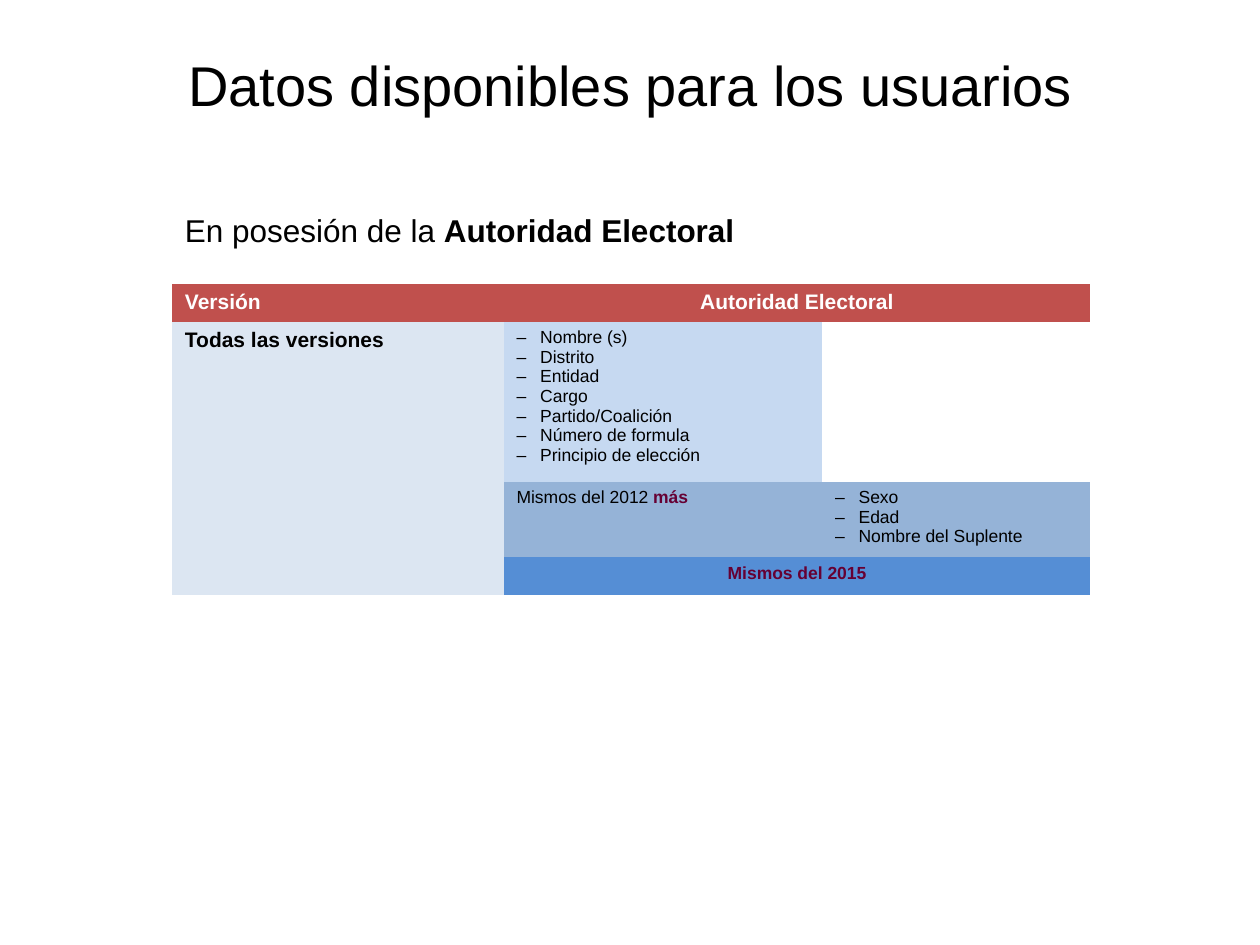
from lxml import etree
from pptx import Presentation
from pptx.dml.color import RGBColor
from pptx.enum.text import MSO_ANCHOR, PP_ALIGN
from pptx.oxml.ns import qn
from pptx.util import Pt

LEFT, CENTER = PP_ALIGN.LEFT, PP_ALIGN.CENTER
MIDDLE = MSO_ANCHOR.MIDDLE
FONT = "Arial"
BLACK, WHITE, WINE = "000000", "FFFFFF", "660033"
RED, PALE, LIGHT, MID, STRONG = "C0504D", "DCE6F2", "C6D9F1", "95B3D7", "558ED5"
NO_STYLE = "{2D5ABB26-0587-4C30-8999-92F81FD0307C}"
INDENT = Pt(13.5)

TITLE = ["Datos disponibles para los usuarios"]
SUBTITLE = [[("En posesión de la ", False, BLACK), ("Autoridad Electoral", True, BLACK)]]
FIELDS = ["Nombre (s)", "Distrito", "Entidad", "Cargo", "Partido/Coalición",
          "Número de formula", "Principio de elección"]
EXTRA = ["Sexo", "Edad", "Nombre del Suplente"]
SAME_2012 = [[("Mismos del 2012 ", False, BLACK), ("más", True, WINE)]]

COLS = [189.5, 182, 152.9]
ROWS = [21.7, 91.4, 42.9, 21.7]
HEAD = dict(size=12, bold=True, color=WHITE)
CELLS = [
    [(RED, ["Versión"], HEAD),
     (RED, ["Autoridad Electoral"], dict(HEAD, align=CENTER)),
     (RED, [], {})],
    [(PALE, ["Todas las versiones"], dict(size=12, bold=True)),
     (LIGHT, FIELDS, dict(bullet="–")),
     (None, [], {})],
    [(PALE, [], {}),
     (MID, SAME_2012, {}),
     (MID, EXTRA, dict(bullet="‒"))],
    [(PALE, [], {}),
     (STRONG, ["Mismos del 2015"], dict(bold=True, color=WINE, align=CENTER)),
     (STRONG, [], {})],
]
SPANS = [0, 3]


def rgb(value):
    return RGBColor.from_string(value)


def write(tf, paragraphs, size=10, bold=False, color=BLACK, align=LEFT, bullet=None):
    for i, runs in enumerate(paragraphs):
        p = tf.paragraphs[0] if i == 0 else tf.add_paragraph()
        p.alignment = align
        if bullet:
            pPr = p._p.get_or_add_pPr()
            pPr.set("marL", str(INDENT))
            pPr.set("indent", str(-INDENT))
            etree.SubElement(pPr, qn("a:buFont"), typeface=FONT)
            etree.SubElement(pPr, qn("a:buChar"), char=bullet)
        if isinstance(runs, str):
            runs = [(runs, bold, color)]
        for text, run_bold, run_color in runs:
            r = p.add_run()
            r.text = text
            r.font.name = FONT
            r.font.size = Pt(size)
            r.font.bold = run_bold
            r.font.color.rgb = rgb(run_color)
    if not paragraphs:
        etree.SubElement(tf.paragraphs[0]._p, qn("a:endParaRPr"), sz=str(size * 100))


def add_text(s, x, y, w, h, paragraphs, **fmt):
    tf = s.shapes.add_textbox(Pt(x), Pt(y), Pt(w), Pt(h)).text_frame
    tf.word_wrap = True
    tf.vertical_anchor = MIDDLE
    write(tf, paragraphs, **fmt)


def add_grid(s, x, y):
    frame = s.shapes.add_table(len(ROWS), len(COLS), Pt(x), Pt(y),
                               Pt(sum(COLS)), Pt(sum(ROWS)))
    table = frame.table
    table.first_row = table.horz_banding = False
    table._tbl.tblPr.find(qn("a:tableStyleId")).text = NO_STYLE
    for column, width in zip(table.columns, COLS):
        column.width = Pt(width)
    for row, height, contents in zip(table.rows, ROWS, CELLS):
        row.height = Pt(height)
        for cell, (fill, paragraphs, fmt) in zip(row.cells, contents):
            if fill:
                cell.fill.solid()
                cell.fill.fore_color.rgb = rgb(fill)
            else:
                cell.fill.background()
            write(cell.text_frame, paragraphs, **fmt)
    for i in SPANS:
        table.cell(i, 1).merge(table.cell(i, 2))


prs = Presentation()
prs.slide_width, prs.slide_height = Pt(720), Pt(540)
s = prs.slides.add_slide(prs.slide_layouts[6])
add_text(s, 36.5, 25.2, 648, 46, TITLE, size=32, align=CENTER)
add_grid(s, 98.5, 162.2)
add_text(s, 98.5, 117, 397.5, 29, SUBTITLE, size=18)
prs.save("out.pptx")
